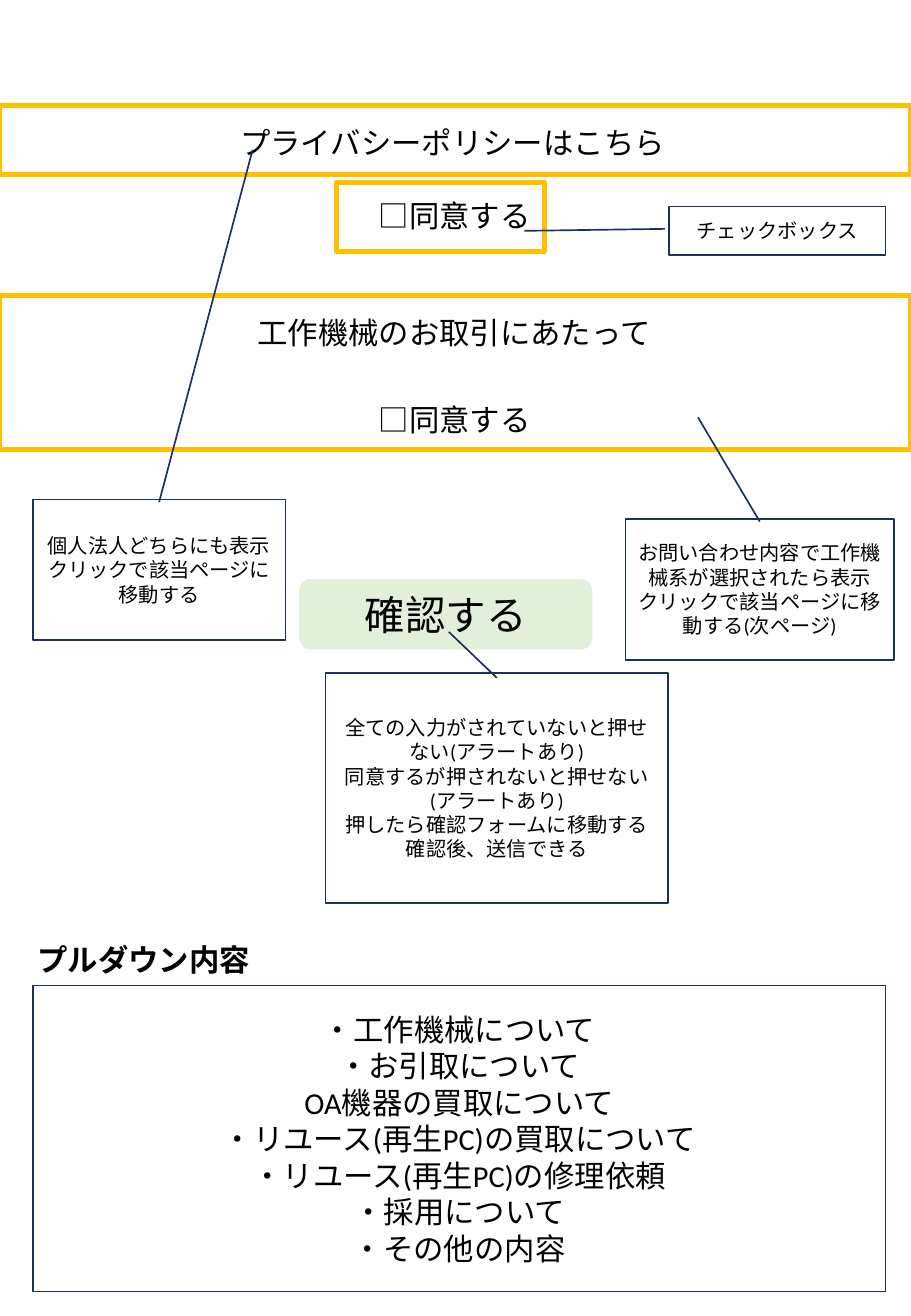
from dataclasses import dataclass

from pptx import Presentation
from pptx.dml.color import RGBColor
from pptx.enum.shapes import MSO_SHAPE
from pptx.enum.text import MSO_ANCHOR, MSO_AUTO_SIZE, PP_ALIGN
from pptx.util import Inches, Pt

RECTANGLE = MSO_SHAPE.RECTANGLE
ROUNDED = MSO_SHAPE.ROUNDED_RECTANGLE
CALLOUT = MSO_SHAPE.LINE_CALLOUT_1
MIDDLE = MSO_ANCHOR.MIDDLE
CENTER = PP_ALIGN.CENTER
FIT_SHAPE = MSO_AUTO_SIZE.SHAPE_TO_FIT_TEXT

GOLD, NAVY, GREEN, BLACK = "FFC000", "1E3256", "E2F0D9", "000000"
PAGE_WIDTH, PAGE_HEIGHT = 7.5, 10.83
LABEL_HEIGHT = 0.4


@dataclass
class Label:
    left: float
    top: float
    width: float
    text: str
    bold: bool = False


@dataclass
class Panel:
    left: float
    top: float
    width: float
    height: float
    lines: tuple = ()
    size: int = 18
    kind: int = RECTANGLE
    line: str = NAVY
    weight: float = 1
    fill: str = ""
    pointer: tuple = ()  # start y, start x, end y, end x as shares of the box


def color(value: str) -> RGBColor:
    return RGBColor.from_string(value)


def write(frame, lines: tuple, size: int, bold: bool = False, align=None) -> None:
    font_format = {"name": "Calibri", "size": Pt(size), "bold": bold}
    for index, line in enumerate(lines):
        para = frame.paragraphs[0] if index == 0 else frame.add_paragraph()
        para.alignment = align
        span = para.add_run()
        span.text = line
        for key, value in font_format.items():
            setattr(span.font, key, value)
        span.font.color.rgb = color(BLACK)


def draw_label(page, label: Label) -> None:
    box = page.shapes.add_textbox(Inches(label.left), Inches(label.top),
                                  Inches(label.width), Inches(LABEL_HEIGHT))
    box.text_frame.word_wrap = False
    box.text_frame.auto_size = FIT_SHAPE
    write(box.text_frame, (label.text,), 18, label.bold)


def draw_panel(page, panel: Panel) -> None:
    box = page.shapes.add_shape(panel.kind, Inches(panel.left), Inches(panel.top),
                                Inches(panel.width), Inches(panel.height))
    box.shadow.inherit = False
    if panel.fill:
        box.fill.solid()
        box.fill.fore_color.rgb = color(panel.fill)
    else:
        box.fill.background()
    box.line.color.rgb = color(panel.line)
    box.line.width = Pt(panel.weight)
    for index, share in enumerate(panel.pointer):
        box.adjustments[index] = share
    box.text_frame.word_wrap = True
    box.text_frame.vertical_anchor = MIDDLE
    write(box.text_frame, panel.lines, panel.size, align=CENTER)


def frame_panel(left: float, top: float, width: float, height: float) -> Panel:
    return Panel(left, top, width, height, line=GOLD, weight=3)


def note(left: float, top: float, width: float, height: float,
         pointer: tuple, *lines: str) -> Panel:
    return Panel(left, top, width, height, lines, 12, CALLOUT, pointer=pointer)


LABELS = [
    Label(2.02, 2.54, 3.48, "工作機械のお取引にあたって"),
    Label(1.88, 0.97, 3.74, "プライバシーポリシーはこちら"),
    Label(3.02, 1.57, 1.46, "□同意する"),
    Label(3.02, 3.25, 1.46, "□同意する"),
    Label(0.21, 7.7, 1.97, "プルダウン内容", bold=True),
]

PANELS = [
    # Highlighted form areas
    frame_panel(0, 2.43, PAGE_WIDTH, 1.27),
    frame_panel(0, 0.87, PAGE_WIDTH, 0.57),
    frame_panel(2.77, 1.5, 1.71, 0.57),
    # Confirm button
    Panel(2.47, 4.77, 2.4, 0.57, ("確認する",), 24, ROUNDED, GREEN, fill=GREEN),
    # Notes with pointers
    note(5.15, 4.27, 2.21, 1.16, (0.02, 0.5, -0.72, 0.27),
         "お問い合わせ内容で工作機械系が選択されたら表示",
         "クリックで該当ページに移動する(次ページ)"),
    note(0.27, 4.11, 2.08, 1.16, (0.02, 0.5, -2.48, 0.87),
         "個人法人どちらにも表示", "クリックで該当ページに移動する"),
    note(2.68, 5.54, 2.82, 1.89, (0.02, 0.5, -0.18, 0.36),
         "全ての入力がされていないと押せない(アラートあり)",
         "同意するが押されないと押せない(アラートあり)",
         "押したら確認フォームに移動する", "確認後、送信できる"),
    note(5.51, 1.7, 1.78, 0.4, (0.46, -0.02, 0.5, -0.67), "チェックボックス"),
    # Pull-down choices
    Panel(0.27, 8.11, 7.02, 2.52, (
        "・工作機械について", "・お引取について", "OA機器の買取について",
        "・リユース(再生PC)の買取について", "・リユース(再生PC)の修理依頼",
        "・採用について", "・その他の内容")),
]


def main() -> None:
    deck = Presentation()
    deck.slide_width, deck.slide_height = Inches(PAGE_WIDTH), Inches(PAGE_HEIGHT)
    page = deck.slides.add_slide(deck.slide_layouts[6])
    for label in LABELS:
        draw_label(page, label)
    for panel in PANELS:
        draw_panel(page, panel)
    deck.save("out.pptx")


if __name__ == "__main__":
    main()
